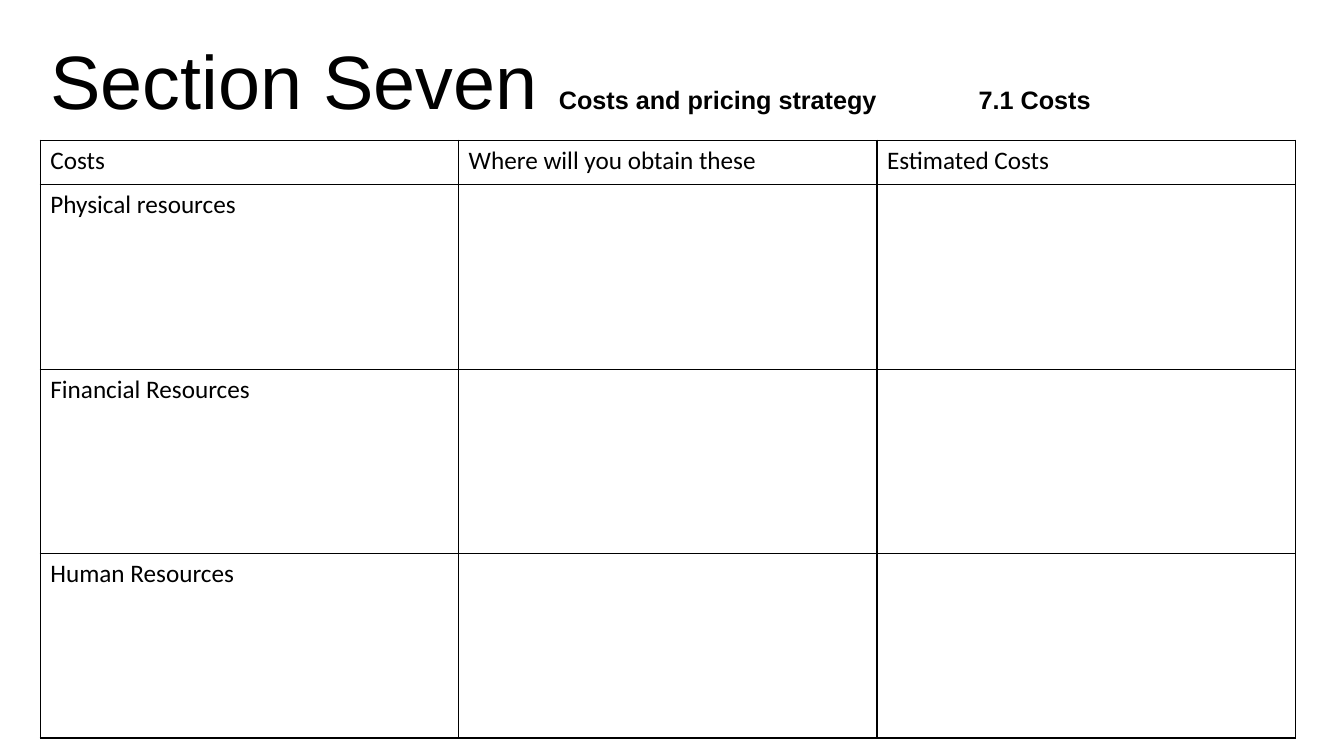
from dataclasses import dataclass

from lxml.etree import SubElement
from pptx import Presentation
from pptx.dml.color import RGBColor
from pptx.enum.text import MSO_ANCHOR, MSO_AUTO_SIZE, PP_ALIGN
from pptx.oxml.ns import qn
from pptx.slide import Slide
from pptx.table import _Cell
from pptx.text.text import TextFrame, _Paragraph
from pptx.util import Pt

BLACK = RGBColor(0x00, 0x00, 0x00)
WHITE = RGBColor(0xFF, 0xFF, 0xFF)

LEFT = 28.8
WIDTH = 896.4
TABLE_TOP = 100.1
HEADER_HEIGHT = 32
RESOURCE_HEIGHT = 131.7


@dataclass(frozen=True)
class CostRow:
    height: float
    texts: tuple[str, ...]


COST_ROWS = (
    CostRow(HEADER_HEIGHT, ("Costs", "Where will you obtain these", "Estimated Costs")),
    CostRow(RESOURCE_HEIGHT, ("Physical resources", "", "")),
    CostRow(RESOURCE_HEIGHT, ("Financial Resources", "", "")),
    CostRow(RESOURCE_HEIGHT, ("Human Resources", "", "")),
)


def add_text(paragraph: _Paragraph, text: str, *, size: float = 18,
             font_name: str = "Arial", bold: bool = False) -> None:
    run = paragraph.add_run()
    run.text = text
    run.font.size = Pt(size)
    run.font.name = font_name
    run.font.bold = bold
    run.font.color.rgb = BLACK


def format_frame(frame: TextFrame, *, wrap: bool) -> _Paragraph:
    frame.word_wrap = wrap
    frame.auto_size = MSO_AUTO_SIZE.SHAPE_TO_FIT_TEXT
    frame.vertical_anchor = MSO_ANCHOR.TOP
    paragraph = frame.paragraphs[0]
    paragraph.alignment = PP_ALIGN.LEFT
    return paragraph


def add_borders(cell: _Cell, *, width: float = 1) -> None:
    properties = cell._tc.get_or_add_tcPr()
    for side in ("L", "R", "T", "B"):
        line = SubElement(properties, qn(f"a:ln{side}"), w=str(Pt(width)))
        fill = SubElement(line, qn("a:solidFill"))
        SubElement(fill, qn("a:srgbClr"), val=str(BLACK))


def add_heading(slide: Slide) -> None:
    title = slide.shapes.title
    title.left, title.top, title.width, title.height = Pt(LEFT), Pt(20.9), Pt(WIDTH), Pt(72.7)
    paragraph = format_frame(title.text_frame, wrap=True)
    add_text(paragraph, "Section Seven ", size=54)
    add_text(paragraph, "Costs and pricing strategy", bold=True)

    subsection = slide.shapes.add_textbox(Pt(691.9), Pt(56.9), Pt(115.9), Pt(28.8))
    add_text(format_frame(subsection.text_frame, wrap=True), "7.1 Costs", bold=True)


def add_cost_table(slide: Slide, rows: tuple[CostRow, ...]) -> None:
    column_count = len(rows[0].texts)
    height = sum(row.height for row in rows)
    table = slide.shapes.add_table(
        len(rows), column_count, Pt(LEFT), Pt(TABLE_TOP), Pt(WIDTH), Pt(height)).table
    table.first_row = False
    table.horz_banding = False
    for row_index, row in enumerate(rows):
        table.rows[row_index].height = Pt(row.height)
        for column_index, text in enumerate(row.texts):
            cell = table.cell(row_index, column_index)
            add_borders(cell)
            cell.fill.background()
            if text:
                add_text(cell.text_frame.paragraphs[0], text, font_name="Calibri")


def main() -> None:
    presentation = Presentation()
    presentation.slide_width, presentation.slide_height = Pt(960), Pt(540)
    # Title Only layout
    slide = presentation.slides.add_slide(presentation.slide_layouts[5])
    slide.background.fill.solid()
    slide.background.fill.fore_color.rgb = WHITE
    # Heading and subsection label
    add_heading(slide)
    # Costs by kind of resource
    add_cost_table(slide, COST_ROWS)
    presentation.save("out.pptx")


if __name__ == "__main__":
    main()
